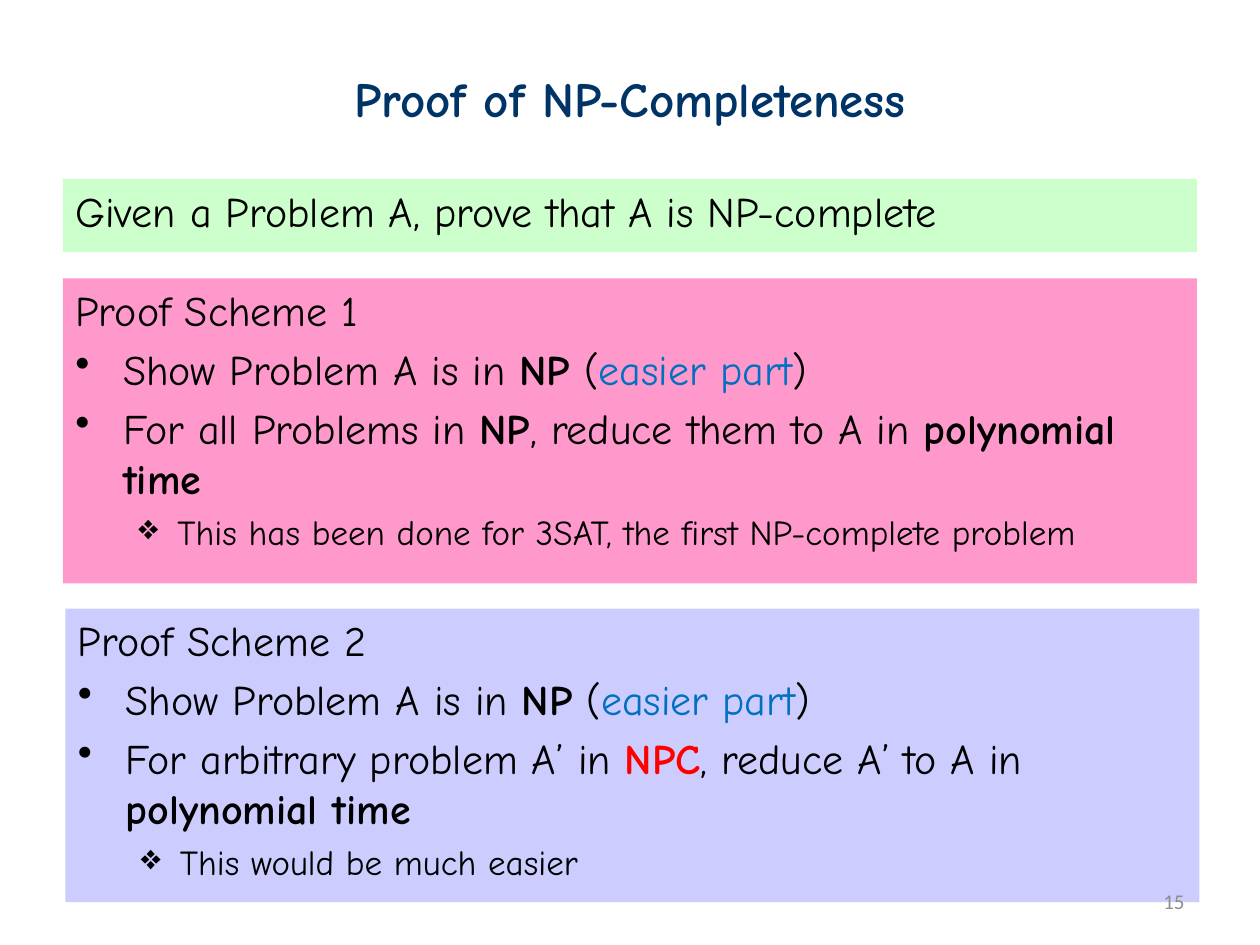
import lxml.etree
import pptx
import pptx.dml.color
import pptx.enum.shapes
import pptx.enum.text
import pptx.oxml.ns
import pptx.util

Inches = pptx.util.Inches
Align = pptx.enum.text.PP_ALIGN
Anchor = pptx.enum.text.MSO_ANCHOR
COLORS = {
    "navy": "003366", "black": "000000", "blue": "0070C0", "red": "FF0000",
    "gray": "8C8C8C", "green": "CCFFCC", "pink": "FF99CC", "lilac": "CCCCFF",
}


def color(name):
    return pptx.dml.color.RGBColor.from_string(COLORS[name])


def write(para, text, size=24, font="Comic Neue", tint="black", bold=False):
    run = para.add_run()
    run.text = text
    run.font.size = pptx.util.Pt(size)
    run.font.name = font
    run.font.bold = bold
    run.font.color.rgb = color(tint)


def add(parent, tag, **attrs):
    node = lxml.etree.SubElement(parent, pptx.oxml.ns.qn(tag))
    for key, value in attrs.items():
        node.set(key, str(value))
    return node


class Deck:
    """Hold the style and the current slide."""

    def __init__(self):
        self.show = pptx.Presentation()
        self.show.slide_width = Inches(10)
        self.show.slide_height = Inches(7.5)
        self.slide = self.show.slides.add_slide(self.show.slide_layouts[6])

    def label(self, text, x, y, w, h, align, **style):
        frame = self.slide.shapes.add_textbox(
            Inches(x), Inches(y), Inches(w), Inches(h)).text_frame
        frame.word_wrap = True
        frame.vertical_anchor = Anchor.MIDDLE
        para = frame.paragraphs[0]
        para.alignment = align
        write(para, text, **style)

    def panel(self, fill, x, y, h, head):
        box = self.slide.shapes.add_shape(
            pptx.enum.shapes.MSO_SHAPE.RECTANGLE,
            Inches(x), Inches(y), Inches(9), Inches(h))
        box.shadow.inherit = False
        box.fill.solid()
        box.fill.fore_color.rgb = color(fill)
        box.line.fill.background()
        frame = box.text_frame
        frame.word_wrap = True
        frame.vertical_anchor = Anchor.TOP
        self.line(frame.paragraphs[0], [(head, {})])
        return frame

    def line(self, para, runs, mark=None, left=0, hang=0, level=0, size=24):
        para.alignment = Align.LEFT
        para.level = level
        props = para._p.get_or_add_pPr()
        props.set("marL", str(Inches(left)))
        props.set("indent", str(-Inches(hang)))
        add(add(props, "a:spcBef"), "a:spcPct", val=20000)
        if mark:
            add(props, "a:buChar", char=mark)
        for text, style in runs:
            write(para, text, size=size, **style)

    def scheme(self, fill, x, y, h, head, task, note):
        frame = self.panel(fill, x, y, h, head)
        first = [("Show Problem A is in ", {}), ("NP", {"bold": True}),
                 (" (", {}), ("easier part", {"tint": "blue"}), (")", {})]
        last = ("polynomial time", {"bold": True})
        for runs in (first, task + [last]):
            self.line(frame.add_paragraph(), runs, "•", 0.38, 0.38)
        self.line(frame.add_paragraph(), [(note, {})], "❖", 0.81, 0.31,
                  level=1, size=20)


def main():
    deck = Deck()
    deck.label("Proof of NP-Completeness", 0.5, 0.3, 9, 0.95, Align.CENTER,
               size=28, tint="navy", bold=True)
    deck.panel("green", 0.5, 1.42, 0.58,
               "Given a Problem A, prove that A is NP-complete")
    deck.scheme("pink", 0.5, 2.21, 2.42, "Proof Scheme 1",
                [("For all Problems in ", {}), ("NP", {"bold": True}),
                 (", reduce them to A in ", {})],
                "This has been done for 3SAT, the first NP-complete problem")
    deck.scheme("lilac", 0.52, 4.83, 2.33, "Proof Scheme 2",
                [("For arbitrary problem A’ in ", {}),
                 ("NPC", {"bold": True, "tint": "red"}),
                 (", reduce A’ to A in ", {})],
                "This would be much easier")
    deck.label("15", 7.17, 6.95, 2.33, 0.4, Align.RIGHT,
               size=12, font="Calibri", tint="gray")
    deck.show.save("out.pptx")


if __name__ == "__main__":
    main()
